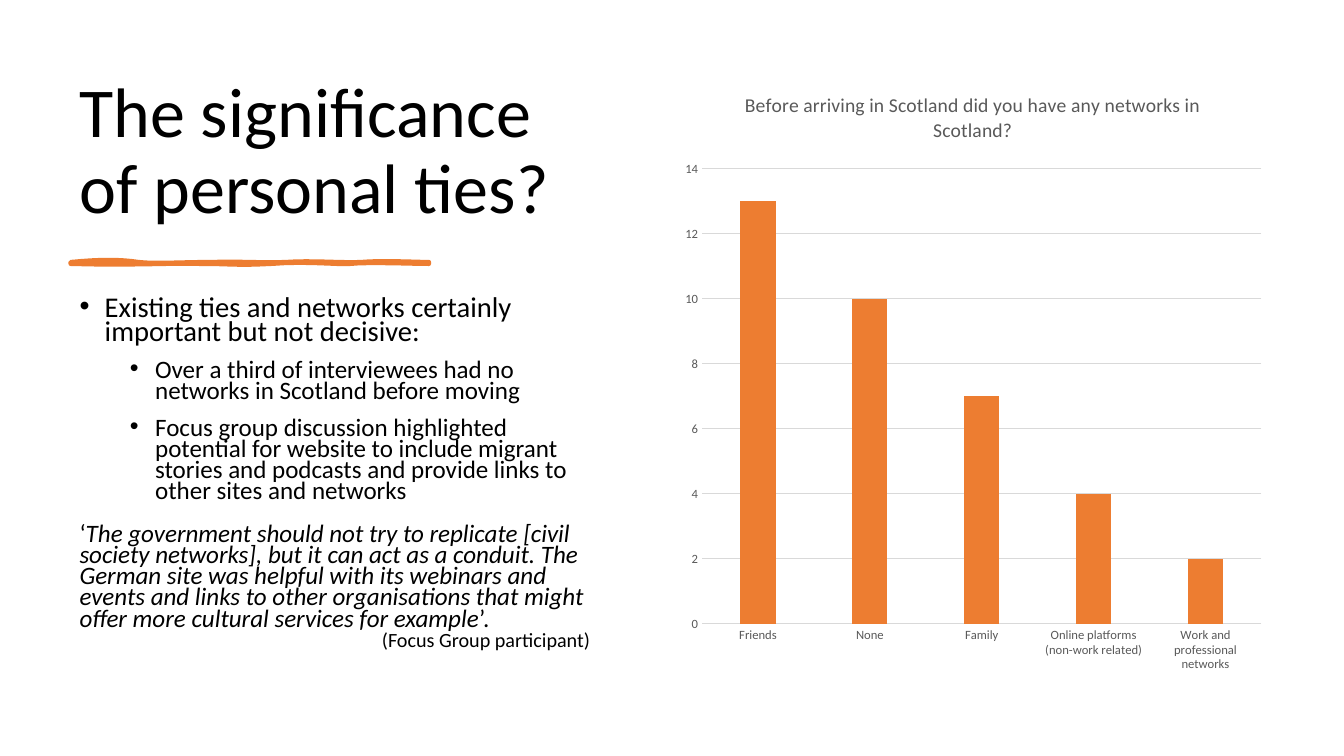
"""Builds a slide on personal ties: title, brush underline, bullet list and column chart."""
from lxml import etree
from pptx import Presentation
from pptx.chart.data import CategoryChartData
from pptx.dml.color import RGBColor
from pptx.enum.chart import XL_CHART_TYPE, XL_TICK_MARK
from pptx.enum.text import MSO_ANCHOR, MSO_AUTO_SIZE, PP_ALIGN
from pptx.oxml import parse_xml
from pptx.oxml.ns import nsdecls, qn
from pptx.util import Inches, Pt

COLUMN_CLUSTERED = XL_CHART_TYPE.COLUMN_CLUSTERED
NO_TICKS = XL_TICK_MARK.NONE
BOTTOM, TOP = MSO_ANCHOR.BOTTOM, MSO_ANCHOR.TOP
NO_FIT = MSO_AUTO_SIZE.NONE
LEFT, RIGHT = PP_ALIGN.LEFT, PP_ALIGN.RIGHT

COLORS = {"ink": "000000", "accent": "ED7D31", "label": "595959", "grid": "D9D9D9"}
FONT = "Calibri"
GRID = 12
STROKE_TOP = [(0, 0), (8, -1.5), (14, -1.5), (19, 0), (24, 1), (30, 0), (39, 0), (48, -0.5),
              (53, 0.5), (60, 0), (67, -1), (76, 0.5), (81, 0), (87, -1), (96, 0), (100, 0)]
STROKE_BOTTOM = [(100, 1), (95, 1), (83, 0), (78, 1), (74, 1.5), (66, -0.5), (56, 1),
                 (46, 2), (45, 1), (36, 1), (27, 0.5), (17, 2), (0, 1)]
QUOTE = ("The government should not try to replicate [civil society networks], but it can act as "
         "a conduit. The German site was helpful with its webinars and events and links to other "
         "organisations that might offer more cultural services for example")
POINTS = [
    {"runs": ["Existing ties and networks certainly important but not decisive:"],
     "size": 20.4, "indent": 0.25, "before": 10, "after": 6},
    {"runs": ["Over a third of interviewees had no networks in Scotland before moving"],
     "size": 17.9, "level": 1, "indent": 0.75, "before": 5, "after": 6},
    {"runs": ["Focus group discussion highlighted potential for website to include migrant stories "
              "and podcasts and provide links to other sites and networks"],
     "size": 17.9, "level": 1, "indent": 0.75, "before": 5, "after": 6},
    {"runs": ["‘", QUOTE, "’."], "size": 17.9, "before": 10},
    {"runs": ["(Focus Group participant)"], "size": 14.4, "before": 2, "after": 6, "align": RIGHT},
]
NETWORKS = {"Friends": 13, "None": 10, "Family": 7, "Online platforms (non-work related)": 4,
            "Work and professional networks": 2}


def rgb(name):
    return RGBColor.from_string(COLORS[name])


def trace(knots, steps=8):
    """Return points along chained cubic curves."""
    traced = [knots[0]]
    for first in range(0, len(knots) - 1, 3):
        a, b, c, d = knots[first:first + 4]
        for step in range(1, steps + 1):
            t = step / steps
            u = 1 - t
            traced.append(tuple(u**3 * p + 3 * u * u * t * q + 3 * u * t * t * r + t**3 * s
                                for p, q, r, s in zip(a, b, c, d)))
    return traced


class SlideBuilder:
    """Holds the grid, the style and the current slide."""

    def __init__(self, deck):
        self.slide = deck.slides.add_slide(deck.slide_layouts[1])
        self.column = deck.slide_width / GRID
        self.row = deck.slide_height / GRID

    def box(self, left, top, width, height):
        return (int(left * self.column), int(top * self.row),
                int(width * self.column), int(height * self.row))

    def style(self, font, size, color="ink"):
        font.name, font.size, font.bold = FONT, Pt(size), False
        font.color.rgb = rgb(color)

    def place(self, holder, area, anchor):
        holder.left, holder.top, holder.width, holder.height = self.box(*area)
        frame = holder.text_frame
        frame.auto_size, frame.word_wrap, frame.vertical_anchor = NO_FIT, True, anchor
        return frame

    def title(self, text, area):
        frame = self.place(self.slide.shapes.title, area, BOTTOM)
        frame.text = text
        heading = frame.paragraphs[0]
        heading.alignment, heading.line_spacing = LEFT, 0.9
        self.style(heading.runs[0].font, 50)

    def points(self, points, area):
        frame = self.place(self.slide.placeholders[1], area, TOP)
        for number, point in enumerate(points):
            paragraph = frame.add_paragraph() if number else frame.paragraphs[0]
            paragraph.level = point.get("level", 0)
            paragraph.alignment = point.get("align", LEFT)
            paragraph.line_spacing = 0.7
            paragraph.space_before = Pt(point["before"])
            paragraph.space_after = Pt(point.get("after", 0))
            self.bullet(paragraph, point.get("indent", 0))
            for text in point["runs"]:
                run = paragraph.add_run()
                run.text = text
                self.style(run.font, point["size"])
                run.font.italic = text == QUOTE

    def bullet(self, paragraph, indent):
        properties = paragraph._p.get_or_add_pPr()
        properties.set("marL", str(Inches(indent)))
        properties.set("indent", str(Inches(-0.25 if indent else 0)))
        if indent:
            font = etree.SubElement(properties, qn("a:buFont"))
            font.set("typeface", "Arial")
            etree.SubElement(properties, qn("a:buChar")).set("char", "•")
        else:
            etree.SubElement(properties, qn("a:buNone"))

    def brush_stroke(self, area):
        left, top, width, height = self.box(*area)
        outline = [(left + x * width / 100, top + y * height)
                   for x, y in trace(STROKE_TOP) + trace(STROKE_BOTTOM)]
        builder = self.slide.shapes.build_freeform(*outline[0])
        builder.add_line_segments(outline[1:], close=True)
        stroke = builder.convert_to_shape()
        stroke.shadow.inherit = False
        stroke.fill.solid()
        stroke.fill.fore_color.rgb = rgb("accent")
        stroke.line.color.rgb = rgb("accent")
        stroke.line.width = Pt(3)

    def column_chart(self, heading, values, area):
        data = CategoryChartData()
        data.categories = list(values)
        data.add_series("Series 1", list(values.values()))
        chart = self.slide.shapes.add_chart(COLUMN_CLUSTERED, *self.box(*area), data).chart
        self.style(chart.font, 10)
        chart.has_legend = False
        chart.has_title = True
        chart.chart_title.text_frame.text = heading
        self.style(chart.chart_title.text_frame.paragraphs[0].runs[0].font, 14, "label")
        chart.chart_title.include_in_layout = False

        plot = chart.plots[0]
        plot.gap_width, plot.overlap, plot.vary_by_categories = 219, -27, False
        bars = plot.series[0].format.fill
        bars.solid()
        bars.fore_color.rgb = rgb("accent")

        categories, scale = chart.category_axis, chart.value_axis
        for axis in (categories, scale):
            axis.major_tick_mark = axis.minor_tick_mark = NO_TICKS
            self.style(axis.tick_labels.font, 9, "label")
        scale.minimum_scale, scale.maximum_scale, scale.major_unit = 0, 14, 2
        scale.has_major_gridlines = True
        scale.format.line.fill.background()
        for line in (categories.format.line, scale.major_gridlines.format.line):
            line.color.rgb = rgb("grid")
            line.width = Pt(0.75)
        self.fix_plot_area(chart, x=0.05, y=0.16, w=0.93, h=0.74)

    def fix_plot_area(self, chart, **shares):
        modes = "".join(f'<c:{side}Mode val="edge"/>' for side in "xy")
        sizes = "".join(f'<c:{side} val="{share}"/>' for side, share in shares.items())
        layout = parse_xml(f'<c:layout {nsdecls("c")}><c:manualLayout>'
                           f'<c:layoutTarget val="inner"/>{modes}{sizes}'
                           '</c:manualLayout></c:layout>')
        plot_area = chart._chartSpace.chart.plotArea
        for automatic in plot_area.findall(qn("c:layout")):
            plot_area.remove(automatic)
        plot_area.insert(0, layout)


def main():
    deck = Presentation()
    deck.slide_width, deck.slide_height = Inches(13.33), Inches(7.5)
    ties = SlideBuilder(deck)
    ties.title("The significance of personal ties?", (0.62, 1.12, 4.74, 2.59))
    ties.brush_stroke((0.63, 4.16, 3.2, 0.03))
    ties.points(POINTS, (0.62, 4.66, 4.74, 6.21))
    ties.column_chart("Before arriving in Scotland did you have any networks in Scotland?",
                      NETWORKS, (6, 1.12, 5.37, 9.76))
    deck.save("out.pptx")


if __name__ == "__main__":
    main()
